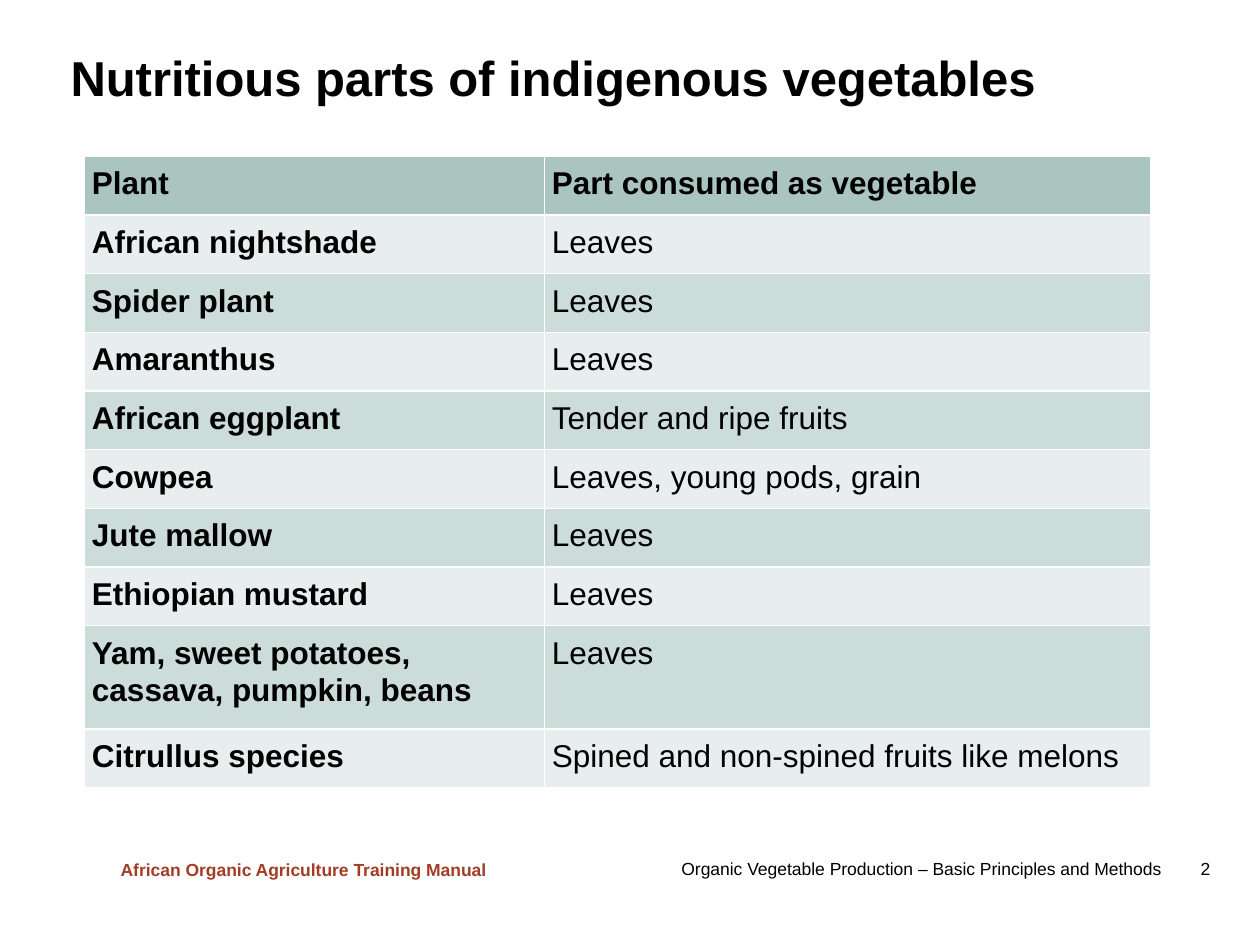
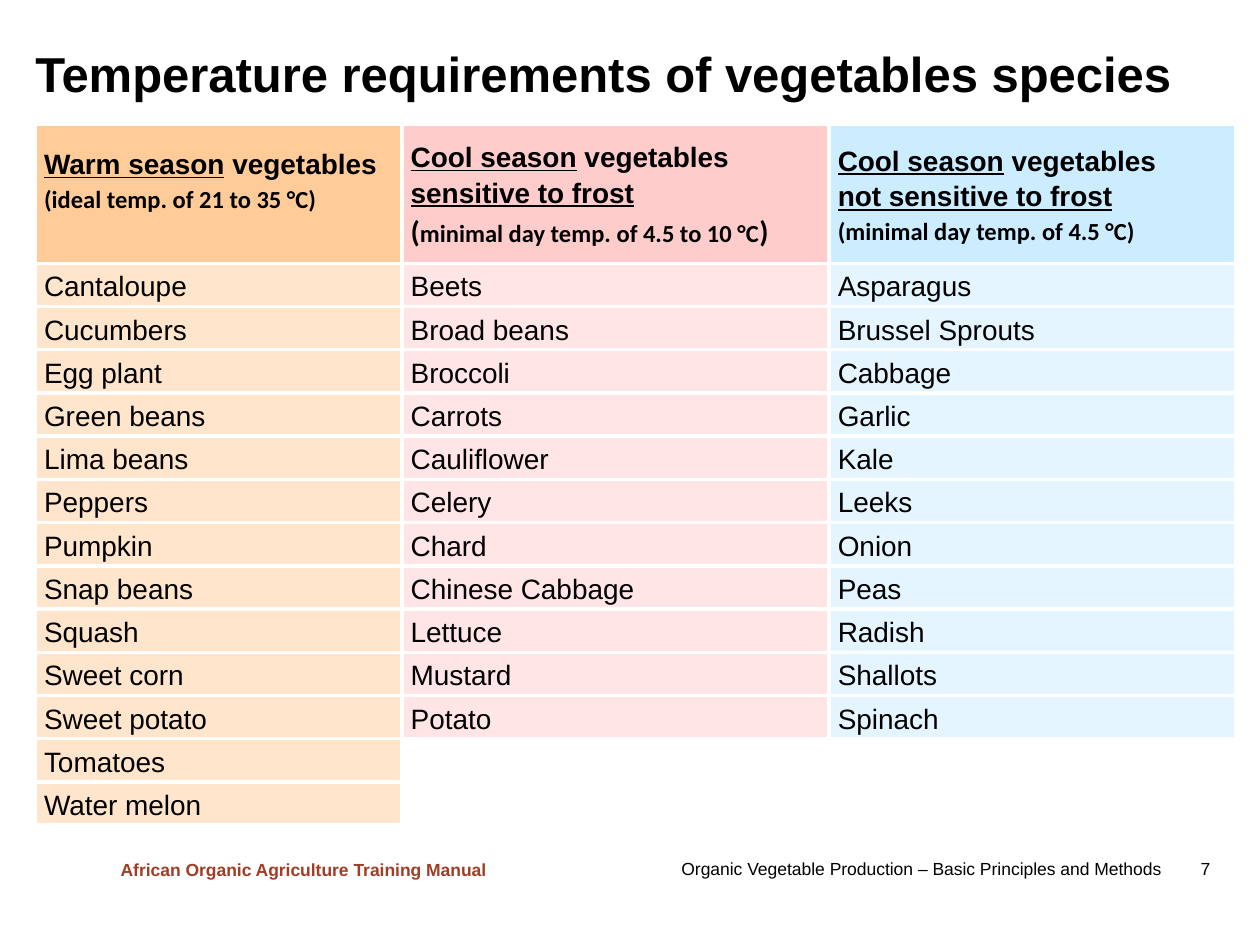
"""Build two vegetable table slides with a shared title style and footers."""
import dataclasses

import lxml.etree
import pptx
import pptx.dml.color
import pptx.enum.dml
import pptx.enum.text
import pptx.oxml.ns
import pptx.util


@dataclasses.dataclass(frozen=True)
class Theme:
    black: str = "000000"
    white: str = "FFFFFF"
    rust: str = "A23D25"
    header_green: str = "AAC5C0"
    bands: tuple = ("E7EEED", "CCDCD9")
    seasons: tuple = ("FFCC99", "FFCCCC", "CCECFF")
    sans: str = "Arial"
    note: str = "Calibri"
    title_size: int = 28
    plant_size: int = 18
    species_size: int = 16
    bracket_size: int = 17
    note_size: int = 14
    footer_size: int = 10


theme = Theme()
Pt = pptx.util.Pt
Anchor = pptx.enum.text.MSO_ANCHOR
presentation = pptx.Presentation()
presentation.slide_width = pptx.util.Inches(10)
presentation.slide_height = pptx.util.Inches(7.5)
column = presentation.slide_width // 100
row = presentation.slide_height // 75

styles = {
    "title": {"name": theme.sans, "size": Pt(theme.title_size), "bold": True},
    "plant": {"name": theme.sans, "size": Pt(theme.plant_size), "bold": True},
    "part": {"name": theme.sans, "size": Pt(theme.plant_size), "bold": False},
    "season": {"name": theme.sans, "size": Pt(theme.species_size), "bold": True},
    "key": {"name": theme.sans, "size": Pt(theme.species_size), "bold": True, "underline": True},
    "species": {"name": theme.sans, "size": Pt(theme.species_size), "bold": False},
    "note": {"name": theme.note, "size": Pt(theme.note_size), "bold": True},
    "bracket": {"name": theme.note, "size": Pt(theme.bracket_size), "bold": True},
    "footer": {"name": theme.sans, "size": Pt(theme.footer_size), "bold": False},
    "manual": {"name": theme.sans, "size": Pt(theme.footer_size), "bold": True},
}
box_format = {"word_wrap": True, "vertical_anchor": Anchor.MIDDLE}
title_format = box_format | {"margin_left": 0, "margin_top": 0,
                             "margin_right": column, "margin_bottom": row // 2}
manual_format = {"word_wrap": False}
plant_margin = int(0.6 * column)
plant_cell = dict.fromkeys(
    ("margin_left", "margin_top", "margin_right", "margin_bottom"), plant_margin)
plant_paragraph = {"line_spacing": 1.07, "space_after": Pt(8)}
species_margin = int(0.7 * column)
species_cell = {"vertical_anchor": Anchor.MIDDLE, "margin_left": species_margin,
                "margin_right": species_margin, "margin_top": 0, "margin_bottom": 0}
species_paragraph = {"line_spacing": 1.15}


def write(holder, lines, holder_format, paragraph_format, color=theme.black):
    for attribute, value in holder_format.items():
        setattr(holder, attribute, value)
    frame = getattr(holder, "text_frame", holder)
    for index, line in enumerate(lines):
        paragraph = frame.add_paragraph() if index else frame.paragraphs[0]
        for attribute, value in paragraph_format.items():
            setattr(paragraph, attribute, value)
        for text, style in line:
            if text == "\n":
                paragraph.add_line_break()
                continue
            run = paragraph.add_run()
            run.text = text
            run.font.color.rgb = pptx.dml.color.RGBColor.from_string(color)
            for attribute, value in styles[style].items():
                setattr(run.font, attribute, value)


def paint(cell, color, border, opacity=100):
    qualify = pptx.oxml.ns.qn
    properties = cell._tc.get_or_add_tcPr()
    for side in ("a:lnL", "a:lnR", "a:lnT", "a:lnB"):
        line = lxml.etree.SubElement(properties, qualify(side), w=str(Pt(border)))
        solid = lxml.etree.SubElement(line, qualify("a:solidFill"))
        lxml.etree.SubElement(solid, qualify("a:srgbClr"), val=theme.white)
    if color is None:
        cell.fill.background()
        return
    cell.fill.solid()
    cell.fill.fore_color.rgb = pptx.dml.color.RGBColor.from_string(color)
    if opacity < 100:
        tint = properties.find(qualify("a:solidFill")).find(qualify("a:srgbClr"))
        lxml.etree.SubElement(tint, qualify("a:alpha"), val=str(opacity * 1000))


plants = [
    ("Plant", "Part consumed as vegetable"),
    ("African nightshade", "Leaves"),
    ("Spider plant", "Leaves"),
    ("Amaranthus", "Leaves"),
    ("African eggplant", "Tender and ripe fruits"),
    ("Cowpea", "Leaves, young pods, grain"),
    ("Jute mallow", "Leaves"),
    ("Ethiopian mustard", "Leaves"),
    ("Yam, sweet potatoes,\ncassava, pumpkin, beans", "Leaves"),
    ("Citrullus species", "Spined and non-spined fruits like melons"),
]
season_headers = [
    [[("Warm season", "key"), (" vegetables", "season")],
     [("(ideal temp. of 21 to 35 °C)", "note")]],
    [[("Cool season", "key"), (" vegetables ", "season"), ("sensitive to frost", "key")],
     [("(", "bracket"), ("minimal day temp. of 4.5 to 10 °C", "note"), (")", "bracket")]],
    [[("Cool season", "key"), (" vegetables", "season"), ("\n", "season"),
      ("not sensitive to frost", "key")],
     [("(minimal day temp. of 4.5 °C)", "note")]],
]
season_species = [
    ["Cantaloupe", "Cucumbers", "Egg plant", "Green beans", "Lima beans", "Peppers", "Pumpkin",
     "Snap beans", "Squash", "Sweet corn", "Sweet potato", "Tomatoes", "Water melon"],
    ["Beets", "Broad beans", "Broccoli", "Carrots", "Cauliflower", "Celery", "Chard",
     "Chinese Cabbage", "Lettuce", "Mustard", "Potato"],
    ["Asparagus", "Brussel Sprouts", "Cabbage", "Garlic", "Kale", "Leeks", "Onion",
     "Peas", "Radish", "Shallots", "Spinach"],
]
species_count = max(map(len, season_species))
pages = [
    {"title": "Nutritious parts of indigenous vegetables", "number": 2,
     "title_place": (5.6, 3.6, 90.2, 5.5), "table_place": (6.7, 12.4),
     "widths": (36.5, 48.1), "heights": [4.66] * 8 + [8.2, 4.66]},
    {"title": "Temperature requirements of vegetables species", "number": 7,
     "title_place": (2.8, 2.5, 96.1, 7.1), "table_place": (2.8, 9.9),
     "widths": (29.1, 33.9, 32.3), "heights": [11] + [3.43] * species_count},
]

tables = []
for page in pages:
    slide = presentation.slides.add_slide(presentation.slide_layouts[6])
    footer = f"Organic Vegetable Production – Basic Principles and Methods\t{page['number']}"
    boxes = [
        ((53.1, 67.6, 46, 2.7), footer, "footer", box_format, theme.black),
        ((8.6, 67.7, 31.4, 2.7), "African Organic Agriculture Training Manual", "manual",
         manual_format, theme.rust),
        (page["title_place"], page["title"], "title", title_format, theme.black),
    ]
    for (left, top, width, height), text, style, frame_format, color in boxes:
        shape = slide.shapes.add_textbox(
            int(left * column), int(top * row), int(width * column), int(height * row))
        write(shape.text_frame, [[(text, style)]], frame_format, {}, color)
        if style == "footer":
            paragraph_properties = shape.text_frame.paragraphs[0]._p.get_or_add_pPr()
            tabs = lxml.etree.SubElement(paragraph_properties, pptx.oxml.ns.qn("a:tabLst"))
            lxml.etree.SubElement(
                tabs, pptx.oxml.ns.qn("a:tab"), pos=str(int(41.2 * column)), algn="l")
    left, top = page["table_place"]
    table = slide.shapes.add_table(
        len(page["heights"]), len(page["widths"]), int(left * column), int(top * row),
        int(sum(page["widths"]) * column), int(sum(page["heights"]) * row)).table
    table.first_row = table.horz_banding = False
    for table_column, width in zip(table.columns, page["widths"]):
        table_column.width = int(width * column)
    for table_row, height in zip(table.rows, page["heights"]):
        table_row.height = int(height * row)
    tables.append(table)

plant_table, season_table = tables
for row_index, texts in enumerate(plants):
    color = theme.bands[(row_index - 1) % 2] if row_index else theme.header_green
    for column_index, text in enumerate(texts):
        style = "part" if row_index and column_index else "plant"
        first, *rest = text.split("\n")
        runs = [(first, style)]
        for part in rest:
            runs += [("\n", style), (part, style)]
        cell = plant_table.cell(row_index, column_index)
        write(cell, [runs], plant_cell, plant_paragraph)
        paint(cell, color, 1)

for column_index, color in enumerate(theme.seasons):
    header = season_table.cell(0, column_index)
    write(header, season_headers[column_index], species_cell, species_paragraph)
    paint(header, color, 2.25)
    names = season_species[column_index]
    for row_index in range(species_count):
        cell = season_table.cell(row_index + 1, column_index)
        filled = row_index < len(names)
        lines = [[(names[row_index], "species")]] if filled else []
        write(cell, lines, species_cell, species_paragraph)
        paint(cell, color if filled else None, 2.25, 50)
season_table.cell(0, 0).margin_bottom = int(2.3 * row)

presentation.save("out.pptx")
